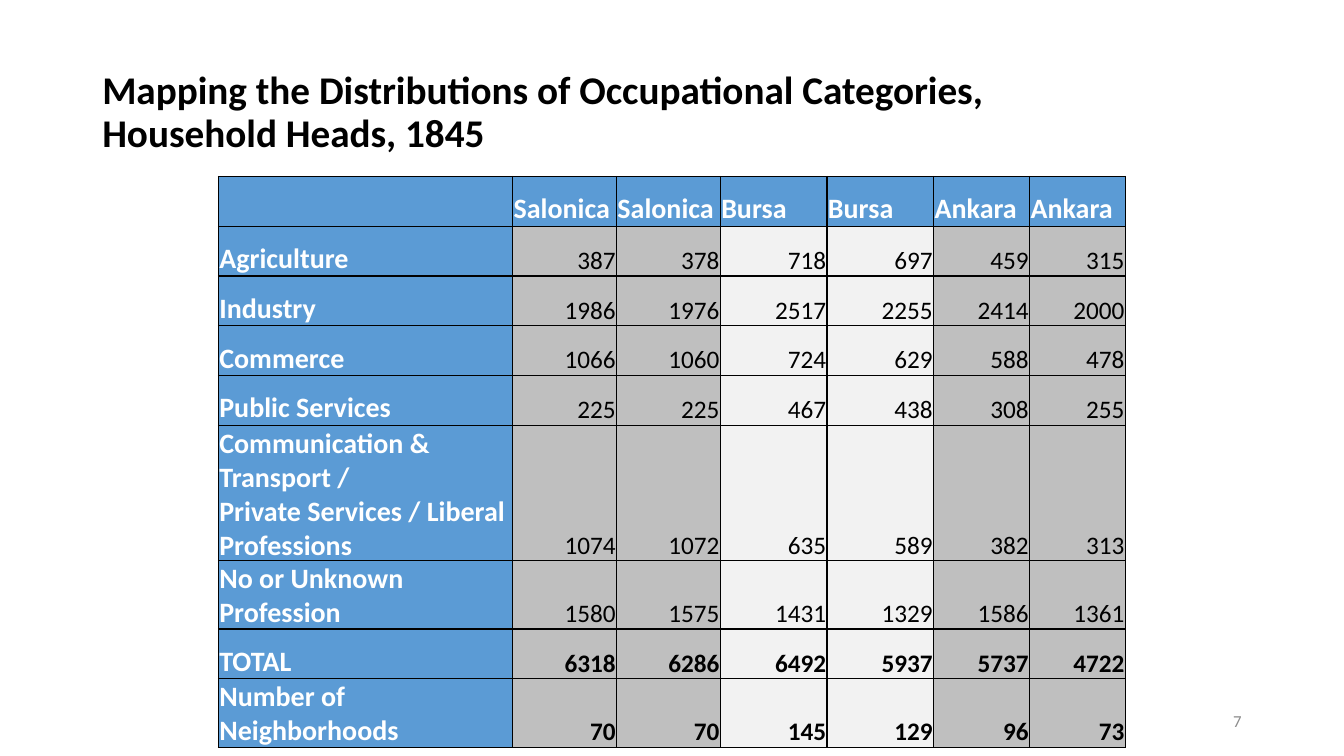
from lxml.etree import SubElement
from pptx import Presentation
from pptx.dml.color import RGBColor
from pptx.enum.text import MSO_ANCHOR, PP_ALIGN
from pptx.oxml.ns import qn
from pptx.util import Pt

BLACK = RGBColor(0x00, 0x00, 0x00)
WHITE = RGBColor(0xFF, 0xFF, 0xFF)
BLUE = RGBColor(0x5B, 0x9B, 0xD5)
SILVER = RGBColor(0xBF, 0xBF, 0xBF)
PALE = RGBColor(0xF2, 0xF2, 0xF2)
GRAY = RGBColor(0x8C, 0x8C, 0x8C)

WIDTHS = [210.2, 74.2, 74.2, 76.2, 76.2, 68.5, 68.5]
TALL = "Communication & Transport /\vPrivate Services / Liberal Professions"
CENTERED = "No or Unknown Profession"
SUMS = ("TOTAL", "Number of Neighborhoods")
ROWS = [
    ("", "Salonica", "Salonica", "Bursa", "Bursa", "Ankara", "Ankara"),
    ("Agriculture", 387, 378, 718, 697, 459, 315),
    ("Industry", 1986, 1976, 2517, 2255, 2414, 2000),
    ("Commerce", 1066, 1060, 724, 629, 588, 478),
    ("Public Services", 225, 225, 467, 438, 308, 255),
    (TALL, 1074, 1072, 635, 589, 382, 313),
    (CENTERED, 1580, 1575, 1431, 1329, 1586, 1361),
    ("TOTAL", 6318, 6286, 6492, 5937, 5737, 4722),
    ("Number of Neighborhoods", 70, 70, 145, 129, 96, 73),
]


def style(frame, size, color, bold=False, align=PP_ALIGN.LEFT):
    for para in frame.paragraphs:
        para.alignment = align
        for run in para.runs:
            font = run.font
            font.name, font.size, font.bold = "Calibri", Pt(size), bold
            font.color.rgb = color


def add_text(slide, box, text, size, color, bold=False, align=PP_ALIGN.LEFT):
    frame = slide.shapes.add_textbox(*map(Pt, box)).text_frame
    frame.word_wrap = True
    frame.vertical_anchor = MSO_ANCHOR.MIDDLE
    frame.text = text
    style(frame, size, color, bold, align)
    return frame


def add_edges(cell):
    props = cell._tc.get_or_add_tcPr()
    for side in ("lnL", "lnR", "lnT", "lnB"):
        line = SubElement(props, qn(f"a:{side}"), w=str(Pt(1)))
        fill = SubElement(line, qn("a:solidFill"))
        SubElement(fill, qn("a:srgbClr"), val=str(BLACK))


def fill_cell(cell, value, label, col):
    add_edges(cell)
    head = isinstance(value, str)
    shade = PALE if col in (3, 4) else SILVER
    cell.fill.solid()
    cell.fill.fore_color.rgb = BLUE if head else shade
    if value == "":
        return
    cell.margin_left = cell.margin_right = cell.margin_top = Pt(0.7)
    cell.margin_bottom = Pt(0)
    middle = value == CENTERED
    cell.vertical_anchor = MSO_ANCHOR.MIDDLE if middle else MSO_ANCHOR.BOTTOM
    frame = cell.text_frame
    frame.text = str(value)
    if head:
        style(frame, 20, WHITE, True)
    else:
        style(frame, 18, BLACK, label in SUMS, PP_ALIGN.RIGHT)


def add_grid(slide, box):
    shape = slide.shapes.add_table(len(ROWS), len(WIDTHS), *map(Pt, box))
    table = shape.table
    for col, width in zip(table.columns, WIDTHS):
        col.width = Pt(width)
    for row, values in enumerate(ROWS):
        label = values[0]
        table.rows[row].height = Pt(60 if label == TALL else 35.6)
        for col, value in enumerate(values):
            fill_cell(table.cell(row, col), value, label, col)


def main():
    deck = Presentation()
    deck.slide_width, deck.slide_height = Pt(960), Pt(540)
    slide = deck.slides.add_slide(deck.slide_layouts[6])
    title = add_text(
        slide, (66, 28.75, 828, 104.4),
        "Mapping the Distributions of Occupational Categories,\v"
        "Household Heads, 1845", 28, BLACK, True)
    title.paragraphs[0].line_spacing = 0.9
    add_grid(slide, (156, 126, 648, 345))
    add_text(slide, (678, 500.5, 216, 28.75), "7", 12, GRAY,
             align=PP_ALIGN.RIGHT)
    deck.save("out.pptx")


if __name__ == "__main__":
    main()
